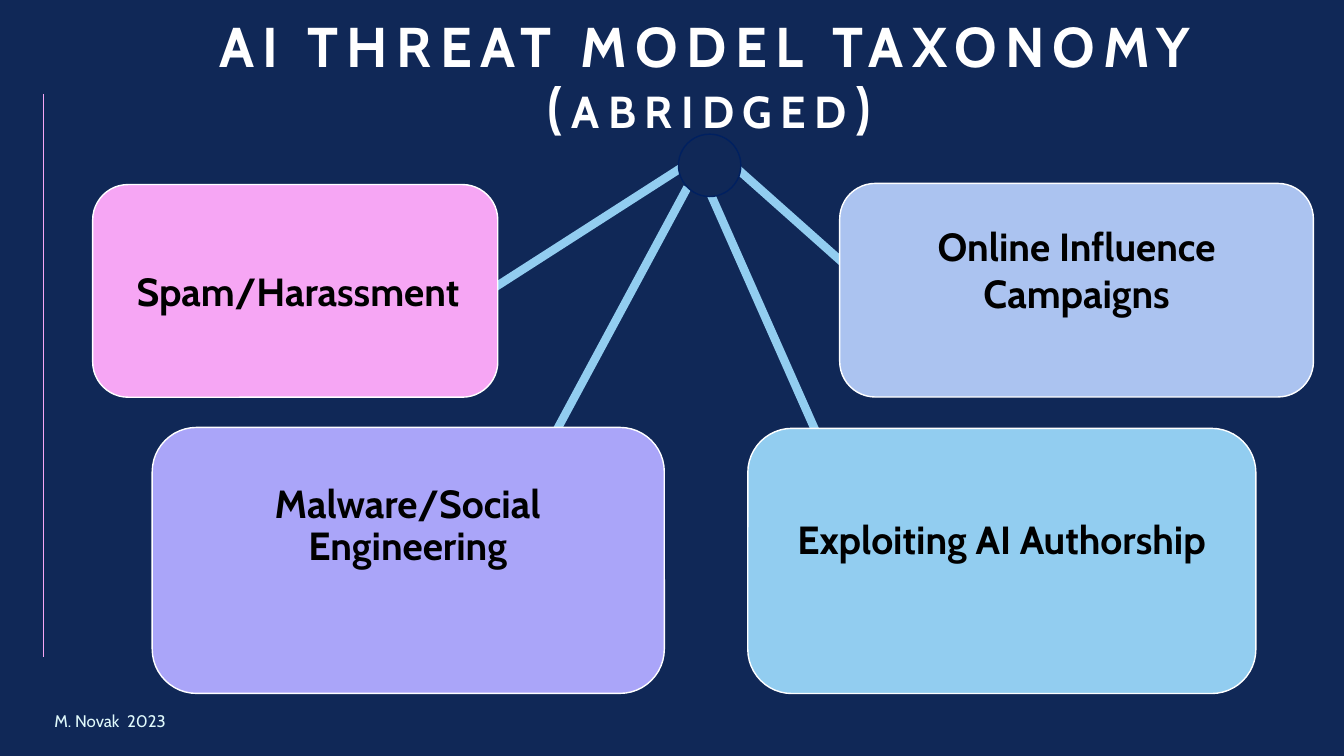
from pptx import Presentation
from pptx.dml.color import RGBColor
from pptx.enum.shapes import MSO_CONNECTOR, MSO_SHAPE
from pptx.enum.text import MSO_ANCHOR, MSO_AUTO_SIZE, PP_ALIGN
from pptx.oxml.ns import qn
from pptx.util import Pt

STRAIGHT = MSO_CONNECTOR.STRAIGHT
ROUNDED, OVAL = MSO_SHAPE.ROUNDED_RECTANGLE, MSO_SHAPE.OVAL
CENTER, MIDDLE = PP_ALIGN.CENTER, MSO_ANCHOR.MIDDLE
FIT = MSO_AUTO_SIZE.SHAPE_TO_FIT_TEXT

NAVY = RGBColor(0x10, 0x28, 0x57)
RIM = RGBColor(0x00, 0x20, 0x60)
WHITE = RGBColor(0xFF, 0xFF, 0xFF)
BLACK = RGBColor(0x00, 0x00, 0x00)
PALE = RGBColor(0xE0, 0xF9, 0xFB)
PINK = RGBColor(0xF6, 0xA6, 0xF4)
VIOLET = RGBColor(0xAA, 0xA5, 0xF9)
SKY = RGBColor(0x92, 0xCD, 0xF0)
PERIWINKLE = RGBColor(0xAB, 0xC3, 0xF0)


class Deck:
    """Holds the style and the current slide."""

    font = "Cabin"

    def __init__(self, prs):
        self.s = prs.slides.add_slide(prs.slide_layouts[6])
        fill = self.s.background.fill
        fill.solid()
        fill.fore_color.rgb = NAVY

    def line(self, start, end, color, width):
        c = self.s.shapes.add_connector(STRAIGHT, *map(Pt, start + end))
        c.line.color.rgb = color
        c.line.width = Pt(width)
        c._element.spPr.add_effectLst() if hasattr(c._element.spPr, "add_effectLst") else \
            c._element.spPr.append(c._element.spPr.makeelement(qn("a:effectLst"), {}))

    def shape(self, kind, box, fill, outline):
        sp = self.s.shapes.add_shape(kind, *map(Pt, box))
        sp.shadow.inherit = False
        sp.fill.solid()
        sp.fill.fore_color.rgb = fill
        sp.line.color.rgb = outline
        sp.line.width = Pt(1)

    def text(self, box, runs, color, frame=None, para=None, bold=True, spacing=0):
        tf = self.s.shapes.add_textbox(*map(Pt, box)).text_frame
        for name, value in {"word_wrap": True, **(frame or {})}.items():
            setattr(tf, name, value)
        p = tf.paragraphs[0]
        for name, value in (para or {}).items():
            setattr(p, name, value)
        for words, size in runs:
            r = p.add_run()
            r.text = words
            style = {"name": self.font, "size": Pt(size), "bold": bold}
            for name, value in style.items():
                setattr(r.font, name, value)
            r.font.color.rgb = color
            if spacing:
                r._r.get_or_add_rPr().set("spc", str(spacing * 100))

    def card(self, label, box, text_box, fill, spoke, leading, lift):
        self.line(*spoke, SKY, 6)
        self.shape(ROUNDED, box, fill, WHITE)
        inset = Pt(5.5)
        frame = {"vertical_anchor": MIDDLE, "margin_left": inset, "margin_right": inset,
                 "margin_top": inset, "margin_bottom": inset + Pt(lift)}
        self.text(text_box, [(label, 28)], BLACK, frame,
                  {"alignment": CENTER, "line_spacing": leading})


CARDS = [
    ("Malware/Social Engineering", (108.7, 305.3, 365.8, 190), (119.5, 313.9, 343.4, 163.4),
     VIOLET, ((491, 133.9), (396, 310.3)), 0.9, 39),
    ("Exploiting AI Authorship", (534.2, 306, 362.9, 189.4), (542.9, 314.6, 344.9, 170.6),
     SKY, ((503.3, 128.9), (587.5, 319)), 0.9, 26),
    ("Online Influence Campaigns", (599.8, 131, 338.4, 152.6), (596.9, 139, 344.2, 137.5),
     PERIWINKLE, ((520.6, 115.2), (624.2, 207.4)), 1.0, 31),
    ("Spam/Harassment", (66.2, 131.8, 289.4, 151.9), (75.6, 139, 274.3, 137.5),
     PINK, ((496.1, 113.8), (351.4, 206.6)), 1.0, 0),
]


def main():
    prs = Presentation()
    prs.slide_width, prs.slide_height = Pt(960), Pt(540)
    deck = Deck(prs)
    deck.line((31, 67), (31, 469.4), PINK, 0.5)
    deck.text((31.7, 504, 94.3, 21.6), [("M. Novak\u00a0 2023".replace("\u00a0", " "), 12)], PALE,
              {"word_wrap": False, "auto_size": FIT}, bold=False)
    deck.text((78.5, 15.1, 856.8, 84.2),
              [("AI THREAT MODEL TAXONOMY (", 40), ("ABRIDGED", 32), (")", 40)], WHITE,
              {"vertical_anchor": MIDDLE}, {"alignment": CENTER, "line_spacing": 0.9}, spacing=6)
    for card in CARDS:
        deck.card(*card)
    deck.shape(OVAL, (484.6, 95.8, 44.6, 44.6), NAVY, RIM)
    prs.save("out.pptx")


if __name__ == "__main__":
    main()
